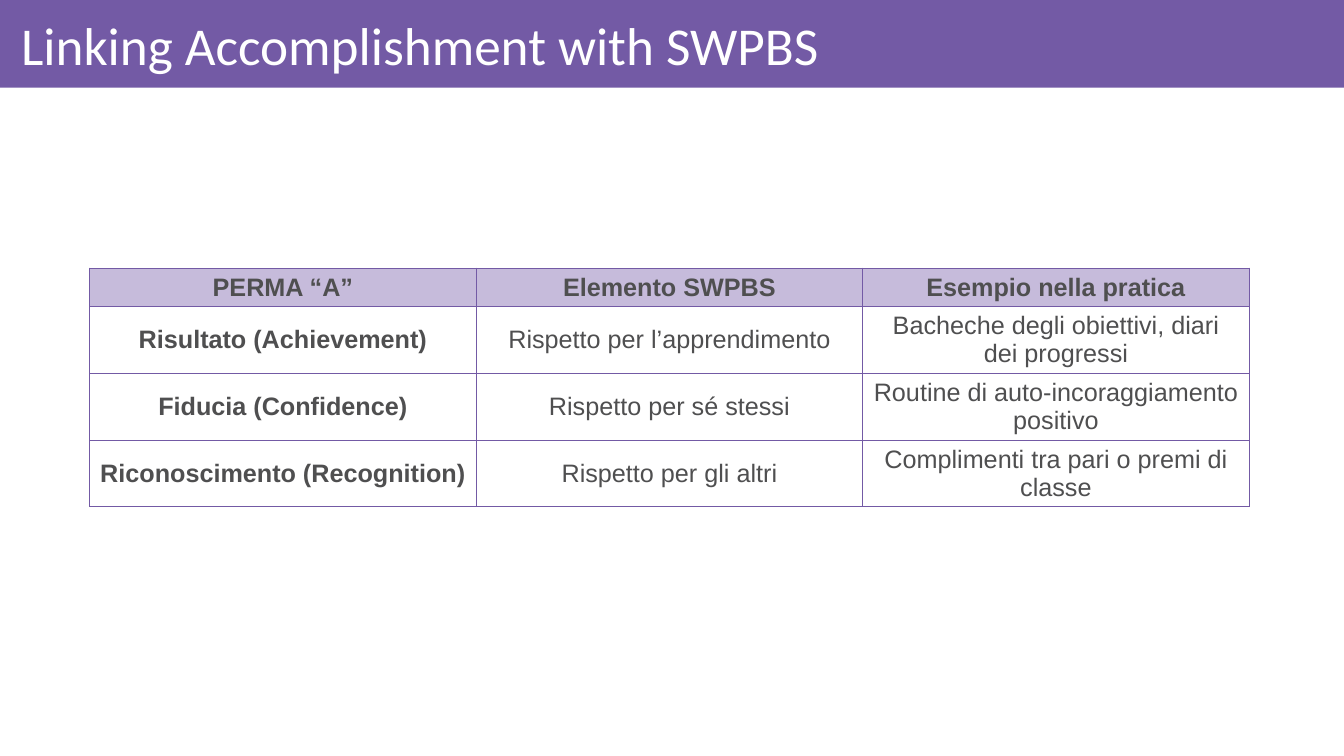
"""Build the slide linking PERMA accomplishment with SWPBS."""
from pptx import Presentation
from pptx.dml.color import RGBColor
from pptx.enum import shapes, text
from pptx.oxml import parse_xml
from pptx.oxml.ns import nsdecls
from pptx.util import Cm, Pt

TITLE = "Linking Accomplishment with SWPBS"
ROWS = [
    ("PERMA “A”", "Elemento SWPBS", "Esempio nella pratica"),
    ("Risultato (Achievement)", "Rispetto per l’apprendimento",
     "Bacheche degli obiettivi, diari dei progressi"),
    ("Fiducia (Confidence)", "Rispetto per sé stessi",
     "Routine di auto-incoraggiamento positivo"),
    ("Riconoscimento (Recognition)", "Rispetto per gli altri",
     "Complimenti tra pari o premi di classe"),
]
PURPLE, LILAC, GREY, WHITE = "735AA5", "C6BBDB", "4F4F50", "FFFFFF"
COL_W, HEAD_H, ROW_H = 9.74, 0.97, 1.68


def color(value):
    return RGBColor.from_string(value)


def write(tf, content, font="Arial", size=18, fill=GREY, bold=False,
          align=text.PP_ALIGN.CENTER, spacing=None):
    p = tf.paragraphs[0]
    p.alignment, p.line_spacing = align, spacing
    r = p.add_run()
    r.text = content
    r.font.name, r.font.size, r.font.bold = font, Pt(size), bold
    r.font.color.rgb = color(fill)


def add_borders(cell):
    tc_pr = cell._tc.get_or_add_tcPr()
    for i, side in enumerate(("lnL", "lnR", "lnT", "lnB")):
        tc_pr.insert(i, parse_xml(
            f'<a:{side} {nsdecls("a")} w="{Pt(1)}"><a:solidFill>'
            f'<a:srgbClr val="{PURPLE}"/></a:solidFill></a:{side}>'))


def add_title(s):
    sp = s.shapes.title
    sp.left, sp.top, sp.width, sp.height = Cm(0.28), Cm(0.23), Cm(33.17), Cm(1.98)
    tf = sp.text_frame
    tf.auto_size = text.MSO_AUTO_SIZE.NONE
    tf.vertical_anchor = text.MSO_ANCHOR.MIDDLE
    tf.margin_left = Cm(0.25)
    tf.margin_top = tf.margin_right = tf.margin_bottom = Cm(0.15)
    write(tf, TITLE, font="Calibri", size=38, fill=WHITE,
          align=text.PP_ALIGN.LEFT, spacing=0.9)


def add_band(s, width):
    band = s.shapes.add_shape(shapes.MSO_SHAPE.RECTANGLE, 0, 0, width, Cm(2.21))
    band.shadow.inherit = False
    band.fill.solid()
    band.fill.fore_color.rgb = color(PURPLE)
    band.line.fill.background()
    s.shapes.title.element.addprevious(band.element)


def add_perma_table(s):
    n_rows, n_cols = len(ROWS), len(ROWS[0])
    table = s.shapes.add_table(
        n_rows, n_cols, Cm(2.26), Cm(6.76), Cm(COL_W * n_cols),
        Cm(HEAD_H + ROW_H * (n_rows - 1))).table
    table.horz_banding = False
    for col in table.columns:
        col.width = Cm(COL_W)
    for i, row in enumerate(ROWS):
        table.rows[i].height = Cm(ROW_H if i else HEAD_H)
        for j, content in enumerate(row):
            cell = table.cell(i, j)
            cell.vertical_anchor = text.MSO_ANCHOR.MIDDLE
            if i == 0:
                cell.fill.solid()
                cell.fill.fore_color.rgb = color(LILAC)
            else:
                cell.fill.background()
            write(cell.text_frame, content, bold=i == 0 or j == 0)
            add_borders(cell)


def main():
    prs = Presentation()
    prs.slide_width, prs.slide_height = Cm(33.87), Cm(19.05)
    s = prs.slides.add_slide(prs.slide_layouts[5])
    add_title(s)
    add_band(s, prs.slide_width)
    add_perma_table(s)
    prs.save("out.pptx")


if __name__ == "__main__":
    main()
